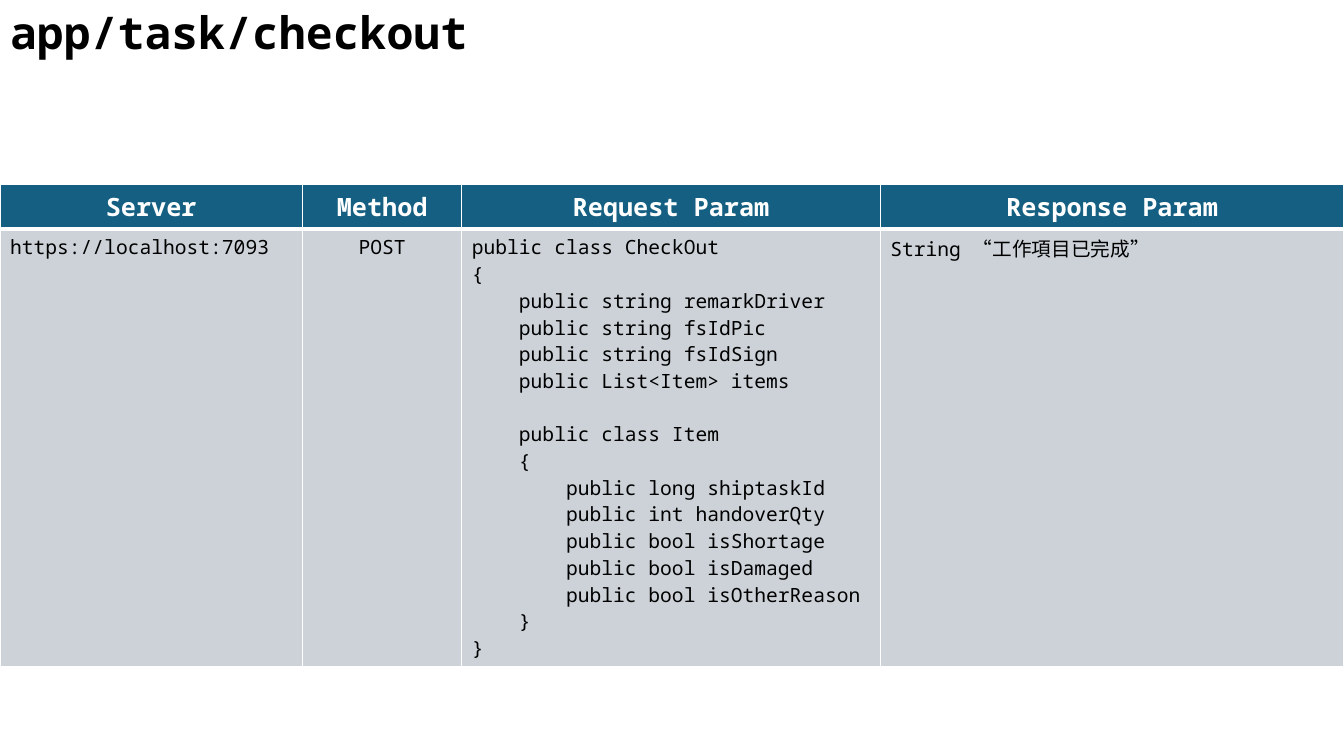
from lxml import etree
from pptx import Presentation
from pptx.dml.color import RGBColor
from pptx.enum.text import MSO_ANCHOR, MSO_AUTO_SIZE, PP_ALIGN
from pptx.oxml.ns import qn
from pptx.text.text import Font
from pptx.util import Inches, Pt

LEFT, CENTER = PP_ALIGN.LEFT, PP_ALIGN.CENTER
TOP, NO_FIT = MSO_ANCHOR.TOP, MSO_AUTO_SIZE.NONE
MONO, CJK = "Noto Sans Mono", "Noto Sans CJK SC"
BLACK, WHITE, TEAL, GREY = "000000", "FFFFFF", "156082", "CCD2D8"
WIDTH, HEIGHT = 13.33, 7.5
COLUMNS = [3, 1.58, 4.15, 4.6]
ROWS = [0.41, 3.83]
HEADERS = ["Server", "Method", "Request Param", "Response Param"]
REQUEST = """public class CheckOut
{
    public string remarkDriver
    public string fsIdPic
    public string fsIdSign
    public List<Item> items

    public class Item
    {
        public long shiptaskId
        public int handoverQty
        public bool isShortage
        public bool isDamaged
        public bool isOtherReason
    }
}"""
VALUES = ["https://localhost:7093", "POST", REQUEST, ["String “", "工作項目已完成", "”"]]
BODY_ALIGN = [LEFT, CENTER, LEFT, LEFT]


def rgb(value):
    """Turn a hex string into a colour."""
    return RGBColor.from_string(value)


def style_font(r_pr, size, color, bold=False, name=MONO):
    """Format run properties, with a matching East Asian font."""
    font = Font(r_pr)
    font.size, font.bold, font.name = Pt(size), bold, name
    font.color.rgb = rgb(color)
    r_pr.find(qn("a:latin")).addnext(etree.Element(qn("a:ea"), typeface=CJK))


def style_text(tf, size, color, bold=False, align=LEFT):
    """Format every paragraph of a text frame, empty ones included."""
    for p in tf.paragraphs:
        p.alignment = align
        for r in p.runs:
            name = CJK if r.text == VALUES[-1][1] else MONO
            style_font(r.font._element, size, color, bold, name)
        if not p.runs:
            style_font(p._p.get_or_add_endParaRPr(), size, color, bold)


def set_borders(cell, **widths):
    """Draw white borders of the given point widths."""
    tc_pr = cell._tc.get_or_add_tcPr()
    for side in "LRTB":
        line = etree.SubElement(tc_pr, qn(f"a:ln{side}"), w=str(Pt(widths.get(side, 1))))
        fill = etree.SubElement(line, qn("a:solidFill"))
        etree.SubElement(fill, qn("a:srgbClr"), val=WHITE)


def add_title(slide, text, left, top, width, height):
    """Place the endpoint name in the title placeholder."""
    sp = slide.shapes.title
    sp.left, sp.top, sp.width, sp.height = map(Inches, (left, top, width, height))
    tf = sp.text_frame
    tf.text = text
    tf.vertical_anchor, tf.auto_size, tf.word_wrap = TOP, NO_FIT, True
    style_text(tf, 32, BLACK, True)


def fill_cell(cell, content, color):
    """Put plain text or a list of runs into a coloured cell."""
    if isinstance(content, list):
        for part in content:
            cell.text_frame.paragraphs[0].add_run().text = part
    else:
        cell.text_frame.text = content
    cell.fill.solid()
    cell.fill.fore_color.rgb = rgb(color)


def add_api_table(slide, left, top, width, height):
    """Add the endpoint table with its header and body rows."""
    box = map(Inches, (left, top, width, height))
    table = slide.shapes.add_table(len(ROWS), len(COLUMNS), *box).table
    for row, share in zip(table.rows, ROWS):
        row.height = Inches(height * share / sum(ROWS))
    for i, share in enumerate(COLUMNS):
        table.columns[i].width = Inches(width * share / sum(COLUMNS))
        header, body = table.cell(0, i), table.cell(1, i)
        set_borders(header, B=3)
        set_borders(body, T=3)
        fill_cell(header, HEADERS[i], TEAL)
        fill_cell(body, VALUES[i], GREY)
        style_text(header.text_frame, 18, WHITE, True, CENTER)
        style_text(body.text_frame, 14, BLACK, align=BODY_ALIGN[i])


def main():
    """Build and save the slide."""
    prs = Presentation()
    prs.slide_width, prs.slide_height = Inches(WIDTH), Inches(HEIGHT)
    slide = prs.slides.add_slide(prs.slide_layouts[5])
    add_api_table(slide, 0, 1.83, WIDTH, sum(ROWS))
    add_title(slide, "app/task/checkout", 0, 0, 6.39, 0.64)
    prs.save("out.pptx")


if __name__ == "__main__":
    main()
